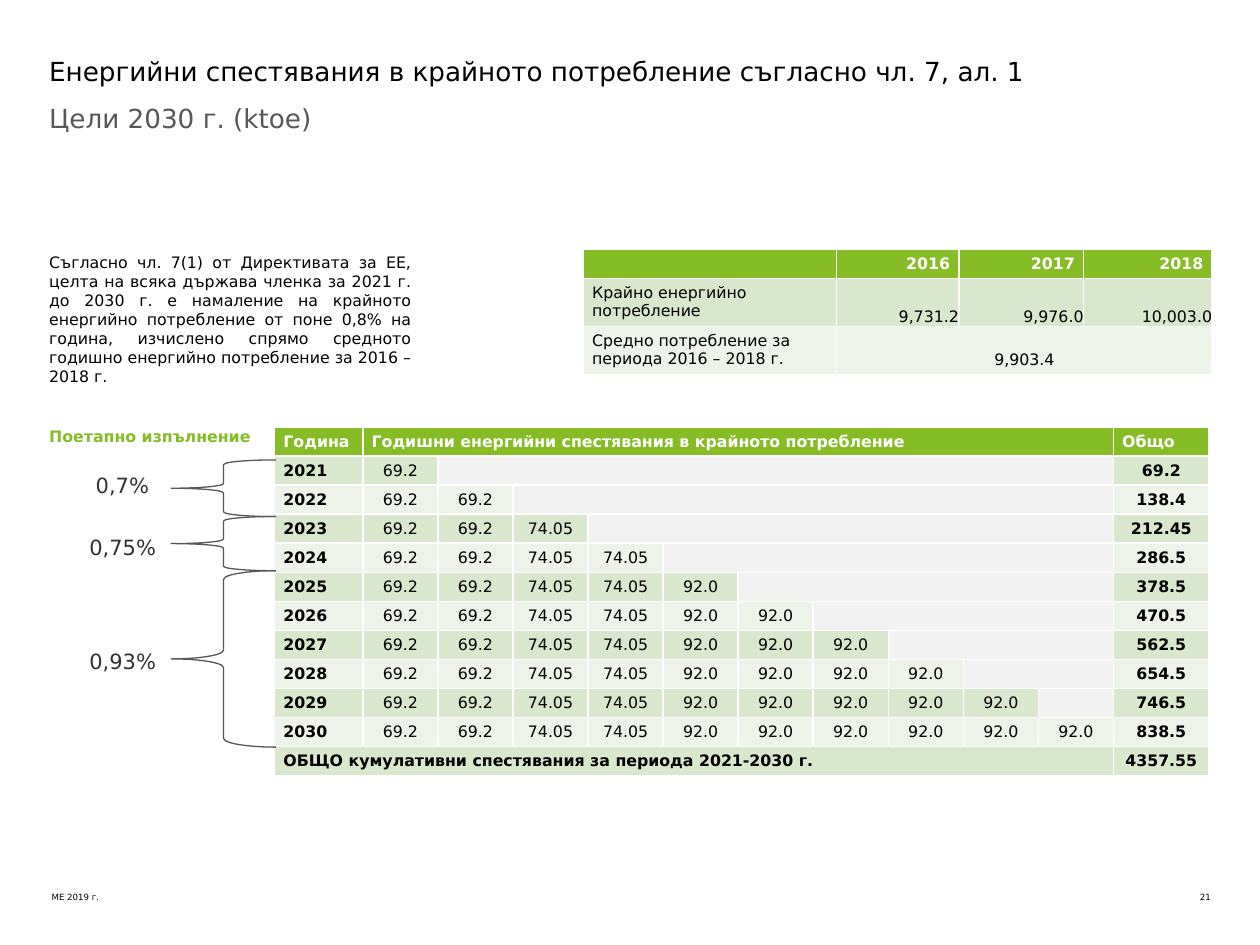
from itertools import accumulate

from pptx import Presentation
from pptx import util as u
from pptx.dml.color import RGBColor
from pptx.enum import shapes, text

FONT = "DejaVu Sans"
BLACK = RGBColor(0x00, 0x00, 0x00)
WHITE = RGBColor(0xFF, 0xFF, 0xFF)
GREEN = RGBColor(0x86, 0xBC, 0x25)
BAND_DARK = RGBColor(0xD9, 0xE7, 0xCD)
BAND_LIGHT = RGBColor(0xED, 0xF3, 0xE8)
UNUSED = RGBColor(0xF2, 0xF2, 0xF2)
SUBTITLE_GREY = RGBColor(0x57, 0x57, 0x57)
LABEL_GREY = RGBColor(0x31, 0x31, 0x31)
BRACE_GREY = RGBColor(0x53, 0x56, 0x5A)
LEFT, CENTER, RIGHT, JUSTIFY = (
    text.PP_ALIGN.LEFT, text.PP_ALIGN.CENTER, text.PP_ALIGN.RIGHT, text.PP_ALIGN.JUSTIFY)
TOP, MIDDLE, BOTTOM = text.MSO_ANCHOR.TOP, text.MSO_ANCHOR.MIDDLE, text.MSO_ANCHOR.BOTTOM


def write(frame, content, size, color, align=LEFT, bold=False):
    para = frame.paragraphs[0]
    para.text = content
    para.alignment = align
    para.font.name = FONT
    para.font.size = u.Pt(size)
    para.font.bold = bold
    para.font.color.rgb = color
    if not content:
        para._p.get_or_add_endParaRPr().set("sz", str(size * 100))


def fill_cell(cell, content, fill, color=BLACK, align=LEFT, bold=False, anchor=MIDDLE, padded=True):
    cell.fill.solid()
    cell.fill.fore_color.rgb = fill
    cell.vertical_anchor = anchor
    cell.margin_left = cell.margin_right = u.Inches(0.07 if padded else 0)
    cell.margin_top = cell.margin_bottom = u.Inches(0.04 if padded else 0)
    write(cell.text_frame, content, 9, color, align, bold)


deck = Presentation()
deck.slide_width, deck.slide_height = u.Inches(10), u.Inches(7.5)
page = deck.slides.add_slide(deck.slide_layouts[6])

intro = (
    "Съгласно чл. 7(1) от Директивата за ЕЕ, целта на всяка държава членка за 2021 г. "
    "до 2030 г. е намаление на крайното енергийно потребление от поне 0,8% на година, "
    "изчислено спрямо средното годишно енергийно потребление за 2016 – 2018 г."
)
for left, top, width, height, content, size, color, align, bold, wrap in [
    (9.36, 7.08, 0.25, 0.08, "21", 4.9, BLACK, RIGHT, False, True),
    (0.41, 7.08, 4.39, 0.22, "МЕ 2019 г.", 4.9, BLACK, LEFT, False, True),
    (0.39, 0.81, 9.23, 0.83, "Цели 2030 г. (ktoe)", 15, SUBTITLE_GREY, LEFT, False, True),
    (0.39, 0.44, 9.23, 0.37, "Енергийни спестявания в крайното потребление съгласно чл. 7, ал. 1",
     15, BLACK, LEFT, False, True),
    (0.39, 2.01, 2.87, 1.06, intro, 9, BLACK, JUSTIFY, False, True),
    (0.76, 3.75, 0.46, 0.2, "0,7%", 12, LABEL_GREY, LEFT, False, False),
    (0.71, 4.24, 0.56, 0.2, "0,75%", 12, LABEL_GREY, LEFT, False, False),
    (0.71, 5.15, 0.56, 0.2, "0,93%", 12, LABEL_GREY, LEFT, False, False),
    (0.39, 3.39, 1.62, 0.15, "Поетапно изпълнение", 9, GREEN, LEFT, True, False),
]:
    box = page.shapes.add_textbox(u.Inches(left), u.Inches(top), u.Inches(width), u.Inches(height))
    frame = box.text_frame
    frame.margin_left = frame.margin_right = frame.margin_top = frame.margin_bottom = 0
    frame.word_wrap = wrap
    write(frame, content, size, color, align, bold)

consumption = page.shapes.add_table(
    3, 4, u.Inches(4.63), u.Inches(1.98), u.Inches(4.98), u.Inches(0.99)).table
for column, width in zip(consumption.columns, [2.01, 0.97, 0.99, 1.02]):
    column.width = u.Inches(width)
for row, height in zip(consumption.rows, [0.23, 0.38, 0.38]):
    row.height = u.Inches(height)
for index, label in enumerate(["", "2016", "2017", "2018"]):
    fill_cell(consumption.cell(0, index), label, GREEN, WHITE, RIGHT, True, TOP)
fill_cell(consumption.cell(1, 0), "Крайно енергийно потребление", BAND_DARK, anchor=TOP)
for index, value in enumerate(["9,731.2", "9,976.0", "10,003.0"], 1):
    fill_cell(consumption.cell(1, index), value, BAND_DARK, align=RIGHT, anchor=BOTTOM, padded=False)
fill_cell(consumption.cell(2, 0), "Средно потребление за периода 2016 – 2018 г.", BAND_LIGHT, anchor=TOP)
for index, value in enumerate(["9,903.4", "", ""], 1):
    fill_cell(consumption.cell(2, index), value, BAND_LIGHT, align=CENTER, anchor=BOTTOM)
consumption.cell(2, 1).merge(consumption.cell(2, 3))

annual = [69.2] * 2 + [74.05] * 2 + [92.0] * 6
totals = [round(total, 2) for total in accumulate(annual)]
count = len(annual)
last = count + 1

savings = page.shapes.add_table(
    count + 2, count + 2, u.Inches(2.18), u.Inches(3.39), u.Inches(7.42), u.Inches(2.76)).table
for column in savings.columns:
    column.width = u.Inches(5.96) // count
savings.columns[0].width = u.Inches(0.7)
savings.columns[last].width = u.Inches(0.76)
for row in savings.rows:
    row.height = u.Inches(0.23)

header = ["Година", "Годишни енергийни спестявания в крайното потребление"] + [""] * (count - 1) + ["Общо"]
for index, label in enumerate(header):
    fill_cell(savings.cell(0, index), label, GREEN, WHITE, bold=True)
savings.cell(0, 1).merge(savings.cell(0, count))

for line, total in enumerate(totals, 1):
    band = BAND_DARK if line % 2 else BAND_LIGHT
    fill_cell(savings.cell(line, 0), str(2020 + line), band, bold=True)
    for index, value in enumerate(annual, 1):
        reached = index <= line
        fill_cell(savings.cell(line, index), str(value) if reached else "",
                  band if reached else UNUSED, align=CENTER, padded=False)
    fill_cell(savings.cell(line, last), str(total), band, align=CENTER, bold=True)
    if line < count - 1:
        savings.cell(line, line + 1).merge(savings.cell(line, count))

footer = ["ОБЩО кумулативни спестявания за периода 2021-2030 г."] + [""] * count
for index, label in enumerate(footer):
    fill_cell(savings.cell(last, index), label, BAND_DARK, bold=True)
fill_cell(savings.cell(last, last), str(round(sum(totals), 2)), BAND_DARK, align=CENTER, bold=True)
savings.cell(last, 0).merge(savings.cell(last, count))

for top, height in [(3.65, 0.45), (4.1, 0.43), (4.53, 1.4)]:
    brace = page.shapes.add_shape(
        shapes.MSO_SHAPE.LEFT_BRACE, u.Inches(1.36), u.Inches(top), u.Inches(0.83), u.Inches(height))
    brace.shadow.inherit = False
    brace.fill.background()
    brace.line.color.rgb = BRACE_GREY
    brace.line.width = u.Pt(0.75)

deck.save("out.pptx")
